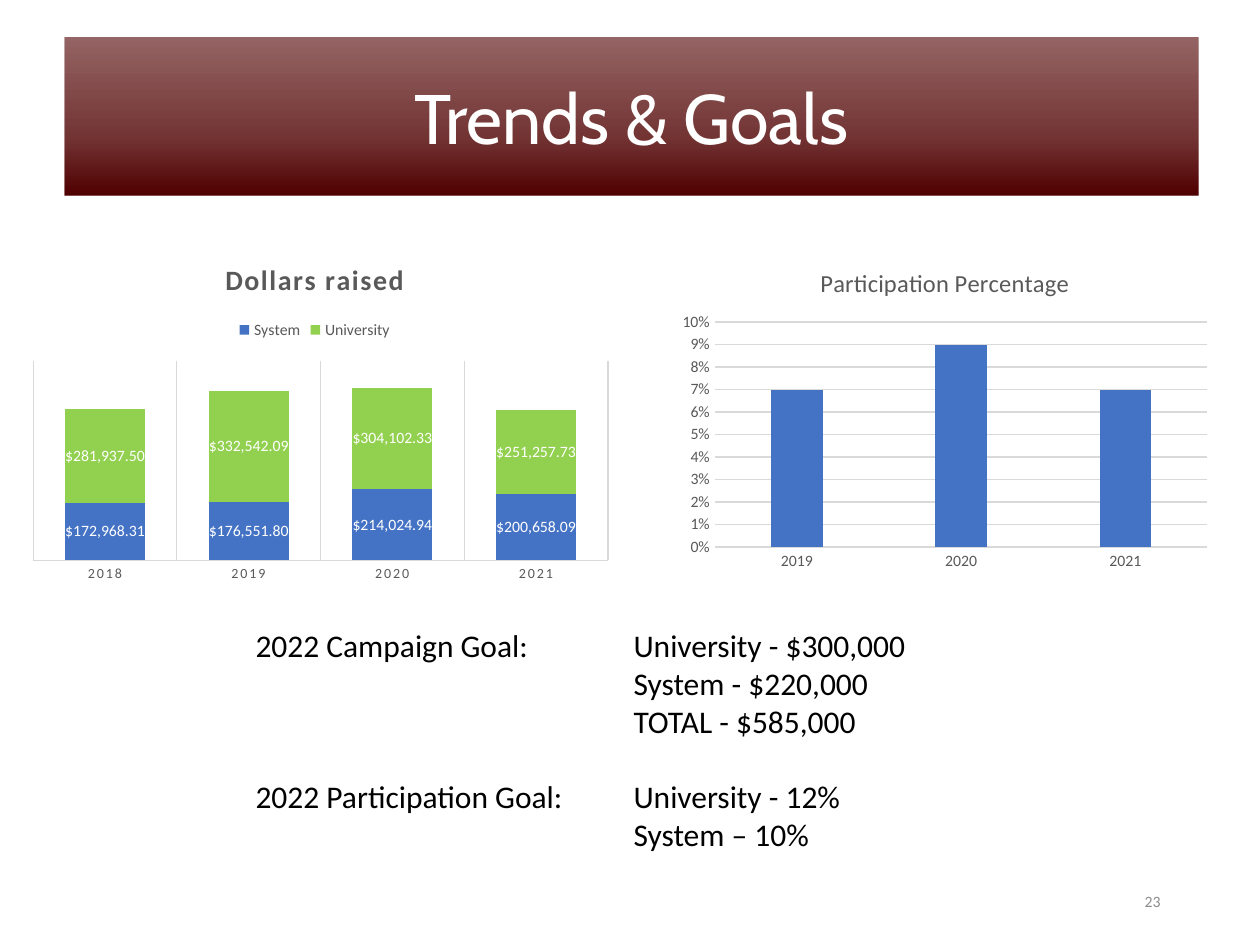
"""Builds the Trends & Goals slide with two charts and the campaign goals."""
from lxml import etree
from pptx import Presentation
from pptx.chart.data import CategoryChartData
from pptx.dml.color import RGBColor
from pptx.enum.chart import XL_CHART_TYPE, XL_LABEL_POSITION, XL_LEGEND_POSITION, XL_TICK_MARK
from pptx.enum.shapes import MSO_SHAPE
from pptx.enum.text import MSO_ANCHOR, PP_ALIGN
from pptx.oxml import parse_xml
from pptx.oxml.ns import nsdecls, qn
from pptx.util import Pt

STACKED, CLUSTERED = XL_CHART_TYPE.COLUMN_STACKED, XL_CHART_TYPE.COLUMN_CLUSTERED
TOP, CENTER_LABEL, NO_TICK = XL_LEGEND_POSITION.TOP, XL_LABEL_POSITION.CENTER, XL_TICK_MARK.NONE
CENTER, LEFT, RIGHT = PP_ALIGN.CENTER, PP_ALIGN.LEFT, PP_ALIGN.RIGHT
MIDDLE, UPPER = MSO_ANCHOR.MIDDLE, MSO_ANCHOR.TOP

COLORS = {"maroon": "500000", "white": "FFFFFF", "black": "000000", "gray": "595959",
          "number": "8C8C8C", "grid": "D9D9D9", "blue": "4472C4", "green": "92D050"}
BANNER_STOPS = [(0, 100), (35, 80), (100, 60)]
GOALS = [
    ("2022 Campaign Goal:", ["University - $300,000", "System - $220,000", "TOTAL - $585,000"]),
    ("2022 Participation Goal:", ["University - 12%", "System – 10%"]),
]
GOAL_TAB, GOAL_GAP = 216, 21.6
CHARTS = [
    {"box": (12.24, 138.24, 335.52, 200.16), "type": STACKED, "title": "Dollars raised",
     "title_font": {"size": Pt(16), "bold": True}, "spacing": 100, "label_size": 8,
     "years": ["2018", "2019", "2020", "2021"], "format": '"$"#,##0.00',
     "series": [("System", "blue", [172968.31, 176551.8, 214024.94, 200658.09]),
                ("University", "green", [281937.5, 332542.09, 304102.33, 251257.73])],
     "plot": {"gap_width": 79, "overlap": 100}, "scale": (600000, 100000),
     "layout": {"x": 0.02, "y": 0.34, "w": 0.98, "h": 0.57}},
    {"box": (383.76, 141.84, 312.48, 187.92), "type": CLUSTERED,
     "title": "Participation Percentage",
     "title_font": {"size": Pt(14), "bold": False}, "spacing": 0, "label_size": 9,
     "years": ["2019", "2020", "2021"], "format": "0%",
     "series": [("Series 1", "blue", [0.07, 0.09, 0.07])],
     "plot": {"gap_width": 219, "overlap": -27}, "scale": (0.1, 0.01), "layout": None},
]


def color(name):
    return RGBColor.from_string(COLORS[name])


def assign(target, values):
    for name, value in values.items():
        setattr(target, name, value)


def style_font(font, size, shade, name="Calibri"):
    assign(font, {"size": Pt(size), "name": name})
    font.color.rgb = color(shade)


def write(shape, lines, size, shade, align, anchor, name="Calibri"):
    frame = shape.text_frame
    assign(frame, {"word_wrap": True, "vertical_anchor": anchor})
    for index, line in enumerate(lines):
        para = frame.paragraphs[0] if index == 0 else frame.add_paragraph()
        para.alignment = align
        span = para.add_run()
        span.text = line
        style_font(span.font, size, shade, name)
    return frame.paragraphs


def add_banner(page):
    banner = page.shapes.add_shape(MSO_SHAPE.RECTANGLE, Pt(36.72), Pt(21.6), Pt(648), Pt(90))
    banner.shadow.inherit = False
    banner.line.fill.background()
    stops = "".join(
        f'<a:gs pos="{place * 1000}"><a:srgbClr val="{COLORS["maroon"]}">'
        f'<a:alpha val="{alpha * 1000}"/></a:srgbClr></a:gs>' for place, alpha in BANNER_STOPS)
    gradient = parse_xml(f'<a:gradFill {nsdecls("a")} rotWithShape="1"><a:gsLst>{stops}</a:gsLst>'
                         '<a:lin ang="16200000" scaled="0"/></a:gradFill>')
    banner._element.spPr.find(qn("a:prstGeom")).addnext(gradient)
    write(banner, ["Trends & Goals"], 40, "white", CENTER, MIDDLE, "Cabin")


def add_goals(page):
    box = page.shapes.add_textbox(Pt(138.96), Pt(354.24), Pt(444.24), Pt(138.24))
    lines, starts = [], []
    for heading, targets in GOALS:
        starts.append(len(lines))
        lines += [f"{heading if index == 0 else ''}\t{target}"
                  for index, target in enumerate(targets)]
    paras = write(box, lines, 18, "black", LEFT, UPPER)
    for start in starts[1:]:
        paras[start].space_before = Pt(GOAL_GAP)
    for para in paras:
        tabs = etree.SubElement(para._p.get_or_add_pPr(), qn("a:tabLst"))
        etree.SubElement(tabs, qn("a:tab"), pos=str(Pt(GOAL_TAB)), algn="l")


def place_plot(chart, layout):
    area = chart._chartSpace.chart.plotArea
    for old in area.findall(qn("c:layout")):
        area.remove(old)
    values = {"layoutTarget": "inner", "xMode": "edge", "yMode": "edge", **layout}
    parts = "".join(f'<c:{name} val="{value}"/>' for name, value in values.items())
    area.insert(0, parse_xml(f'<c:layout {nsdecls("c")}><c:manualLayout>{parts}'
                             '</c:manualLayout></c:layout>'))


def draw_line(line, shade="grid"):
    line.color.rgb = color(shade)
    line.width = Pt(0.75)


def add_column_chart(page, item):
    data = CategoryChartData(number_format=item["format"])
    data.categories = item["years"]
    for name, _, values in item["series"]:
        data.add_series(name, values)
    chart = page.shapes.add_chart(item["type"], *map(Pt, item["box"]), data).chart
    style_font(chart.font, 10, "black")
    stacked = item["type"] == STACKED

    chart.has_title = True
    write_title = chart.chart_title.text_frame
    write_title.text = item["title"]
    span = write_title.paragraphs[0].runs[0]
    style_font(span.font, 14, "gray")
    assign(span.font, item["title_font"])
    chart.chart_title.include_in_layout = False

    plot = chart.plots[0]
    assign(plot, {"vary_by_categories": False, **item["plot"]})
    for series, (_, shade, _) in zip(plot.series, item["series"]):
        series.format.fill.solid()
        series.format.fill.fore_color.rgb = color(shade)
        if stacked:
            labels = series.data_labels
            assign(labels, {"show_value": True, "position": CENTER_LABEL,
                            "number_format": item["format"], "number_format_is_linked": False})
            style_font(labels.font, 9, "white")

    years, amounts = chart.category_axis, chart.value_axis
    for axis, size in ((years, item["label_size"]), (amounts, 9)):
        assign(axis, {"major_tick_mark": NO_TICK, "minor_tick_mark": NO_TICK})
        style_font(axis.tick_labels.font, size, "gray")
    draw_line(years.format.line)
    assign(years, {"has_major_gridlines": stacked})
    maximum, step = item["scale"]
    assign(amounts, {"minimum_scale": 0, "maximum_scale": maximum, "major_unit": step,
                     "has_major_gridlines": not stacked, "visible": not stacked})
    assign(amounts.tick_labels, {"number_format": item["format"],
                                 "number_format_is_linked": False})
    amounts.format.line.fill.background()
    draw_line((years if stacked else amounts).major_gridlines.format.line)

    chart.has_legend = stacked
    if stacked:
        assign(chart.legend, {"position": TOP, "include_in_layout": False})
        style_font(chart.legend.font, 9, "gray")
    if item["spacing"]:
        for font in (span.font, years.tick_labels.font):
            font._element.set("spc", str(item["spacing"]))
    if item["layout"]:
        place_plot(chart, item["layout"])


def main():
    deck = Presentation()
    assign(deck, {"slide_width": Pt(720), "slide_height": Pt(540)})
    page = deck.slides.add_slide(deck.slide_layouts[6])
    add_banner(page)
    number = page.shapes.add_textbox(Pt(508.32), Pt(500.4), Pt(162), Pt(28.8))
    write(number, ["23"], 9, "number", RIGHT, MIDDLE)
    add_goals(page)
    for item in CHARTS:
        add_column_chart(page, item)
    deck.save("out.pptx")


if __name__ == "__main__":
    main()
